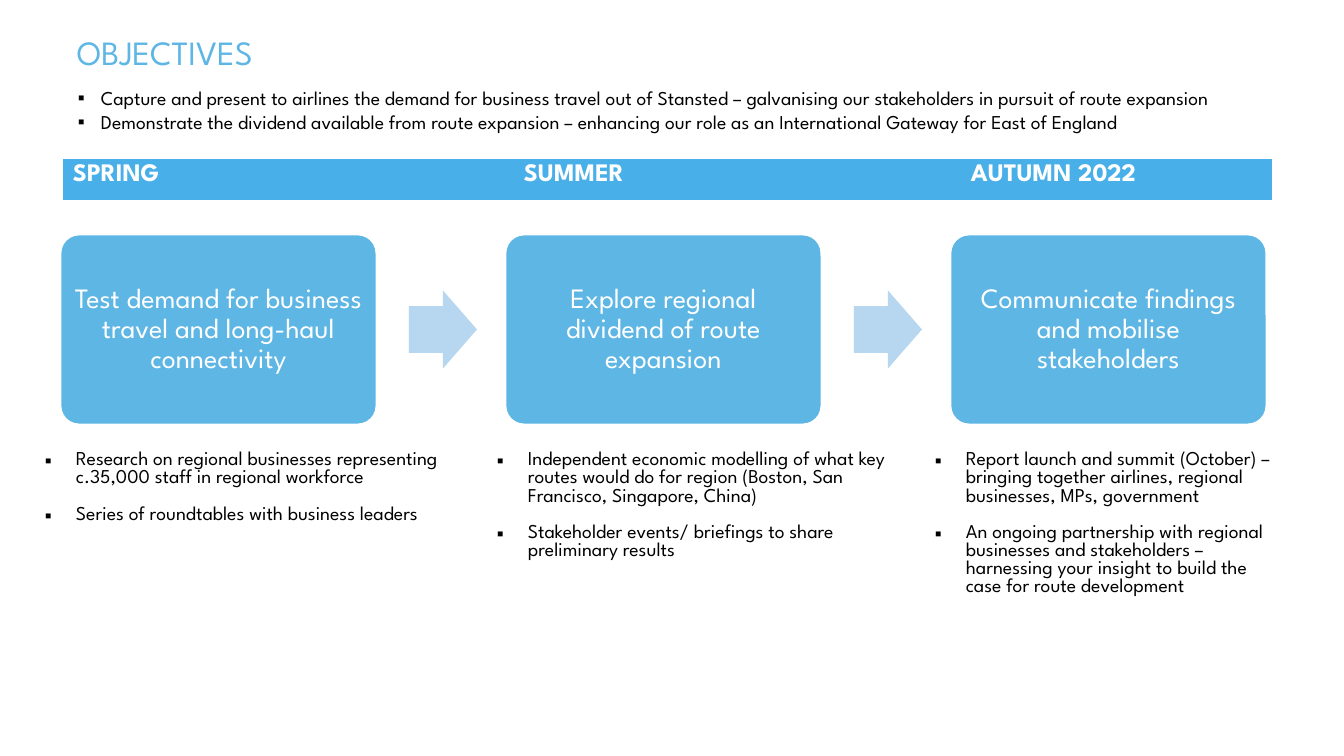
from dataclasses import dataclass

from lxml.etree import SubElement
from pptx import Presentation
from pptx.dml.color import RGBColor
from pptx.enum.shapes import MSO_SHAPE as Shape
from pptx.enum.text import MSO_ANCHOR as Anchor, PP_ALIGN as Align
from pptx.oxml.ns import qn
from pptx.util import Pt

TITLE = "OBJECTIVES"
AIMS = [
    "Capture and present to airlines the demand for business travel out of Stansted – galvanising our stakeholders in pursuit of route expansion",
    "Demonstrate the dividend available from route expansion – enhancing our role as an International Gateway for East of England",
]
SEASONS = ["SPRING", "SUMMER", "AUTUMN 2022"]
STEPS = [
    "Test demand for business travel and long-haul connectivity",
    "Explore regional dividend of route expansion",
    "Communicate findings and mobilise stakeholders",
]
ACTIONS = [
    [
        "Research on regional businesses representing c.35,000 staff in regional workforce",
        "Series of roundtables with business leaders",
    ],
    [
        "Independent economic modelling of what key routes would do for region (Boston, San Francisco, Singapore, China)",
        "Stakeholder events/ briefings to share preliminary results",
    ],
    [
        "Report launch and summit (October) – bringing together airlines, regional businesses, MPs, government",
        "An ongoing partnership with regional businesses and stakeholders – harnessing your insight to build the case for route development",
    ],
]


@dataclass(frozen=True)
class Theme:
    font: str = "League Spartan"
    ink: str = "000000"
    paper: str = "FFFFFF"
    band: str = "49AFE9"
    card: str = "5EB6E4"
    arrow: str = "B6D7EF"
    title_size: float = 24.3
    step_size: int = 20
    season_size: int = 18
    body_size: int = 14


THEME = Theme()
PX = 914400 / 100.8
SEASON_COLUMNS = [451, 447, 311]
ACTION_COLUMNS = [452, 438, 368]
CARD_LEFT, CARD_TOP, CARD_WIDTH, CARD_HEIGHT, CARD_PITCH = 60, 234, 317, 191, 445
ARROW_WIDTH, ARROW_HEIGHT = 68, 78


def px(length):
    return round(length * PX)


def colour(code):
    return RGBColor.from_string(code)


def write(frame, texts, *, size, ink=THEME.ink, bold=False, align=Align.LEFT,
          anchor=Anchor.TOP, spacing=None, gap=0, indent=0, insets=(10, 5)):
    frame.word_wrap = True
    frame.vertical_anchor = anchor
    frame.margin_left = frame.margin_right = px(insets[0])
    frame.margin_top = frame.margin_bottom = px(insets[1])
    for index, text in enumerate(texts):
        para = frame.add_paragraph() if index else frame.paragraphs[0]
        para.alignment = align
        para.space_before = Pt(gap if index else 0)
        para.space_after = Pt(0)
        if spacing:
            para.line_spacing = spacing
        if indent:
            properties = para._p.get_or_add_pPr()
            properties.set("marL", str(px(indent)))
            properties.set("indent", str(-px(indent)))
            SubElement(properties, qn("a:buFont"), typeface="Arial")
            SubElement(properties, qn("a:buChar"), char="▪")
        span = para.add_run()
        span.text = text
        span.font.name = THEME.font
        span.font.size = Pt(size)
        span.font.bold = bold
        span.font.color.rgb = colour(ink)


def add_row(page, left, top, height, widths, fill, contents, **style):
    table = page.shapes.add_table(
        1, len(widths), px(left), px(top), px(sum(widths)), px(height)).table
    table.first_row = table.horz_banding = False
    table.rows[0].height = px(height)
    for column, width, texts in zip(range(len(widths)), widths, contents):
        table.columns[column].width = px(width)
        cell = table.cell(0, column)
        cell.fill.solid()
        cell.fill.fore_color.rgb = colour(fill)
        write(cell.text_frame, texts, **style)
        cell.margin_left = cell.margin_right = px(10)
        cell.margin_top = cell.margin_bottom = px(5)
        cell.vertical_anchor = Anchor.TOP
        borders = cell._tc.get_or_add_tcPr()
        for index, side in enumerate(("lnL", "lnR", "lnT", "lnB")):
            border = borders.makeelement(qn(f"a:{side}"), {"w": "0"})
            SubElement(border, qn("a:noFill"))
            borders.insert(index, border)


def add_block(page, kind, left, top, width, height, fill, adjustments):
    block = page.shapes.add_shape(kind, px(left), px(top), px(width), px(height))
    block.shadow.inherit = False
    block.fill.solid()
    block.fill.fore_color.rgb = colour(fill)
    block.line.fill.background()
    for index, value in enumerate(adjustments):
        block.adjustments[index] = value
    return block


def main():
    deck = Presentation()
    deck.slide_width, deck.slide_height = px(1344), px(756)
    page = deck.slides.add_slide(deck.slide_layouts[5])

    title = page.shapes.title
    title.left, title.top, title.width, title.height = px(67), px(27), px(1210), px(50)
    write(title.text_frame, [TITLE], size=THEME.title_size, ink=THEME.card,
          anchor=Anchor.MIDDLE)

    aims = page.shapes.add_textbox(px(68), px(81), px(1170), px(57))
    write(aims.text_frame, AIMS, size=THEME.body_size, indent=23)

    add_row(page, 63, 159, 41, SEASON_COLUMNS, THEME.band,
            [[season] for season in SEASONS],
            size=THEME.season_size, ink=THEME.paper, bold=True)

    for index, step in enumerate(STEPS):
        left = CARD_LEFT + index * CARD_PITCH
        card = add_block(page, Shape.ROUNDED_RECTANGLE, left, CARD_TOP,
                         CARD_WIDTH, CARD_HEIGHT, THEME.card, [0.1])
        card.line.color.rgb = colour(THEME.paper)
        card.line.width = Pt(2)
        write(card.text_frame, [step], size=THEME.step_size, ink=THEME.paper,
              align=Align.CENTER, anchor=Anchor.MIDDLE, spacing=0.9, insets=(8, 8))
        if index < len(STEPS) - 1:
            add_block(page, Shape.RIGHT_ARROW, left + 349,
                      CARD_TOP + (CARD_HEIGHT - ARROW_HEIGHT) / 2,
                      ARROW_WIDTH, ARROW_HEIGHT, THEME.arrow, [0.6, 0.5])

    add_row(page, 35, 447, 205, ACTION_COLUMNS, THEME.paper, ACTIONS,
            size=THEME.body_size, gap=13, indent=31)

    deck.save("out.pptx")


if __name__ == "__main__":
    main()
